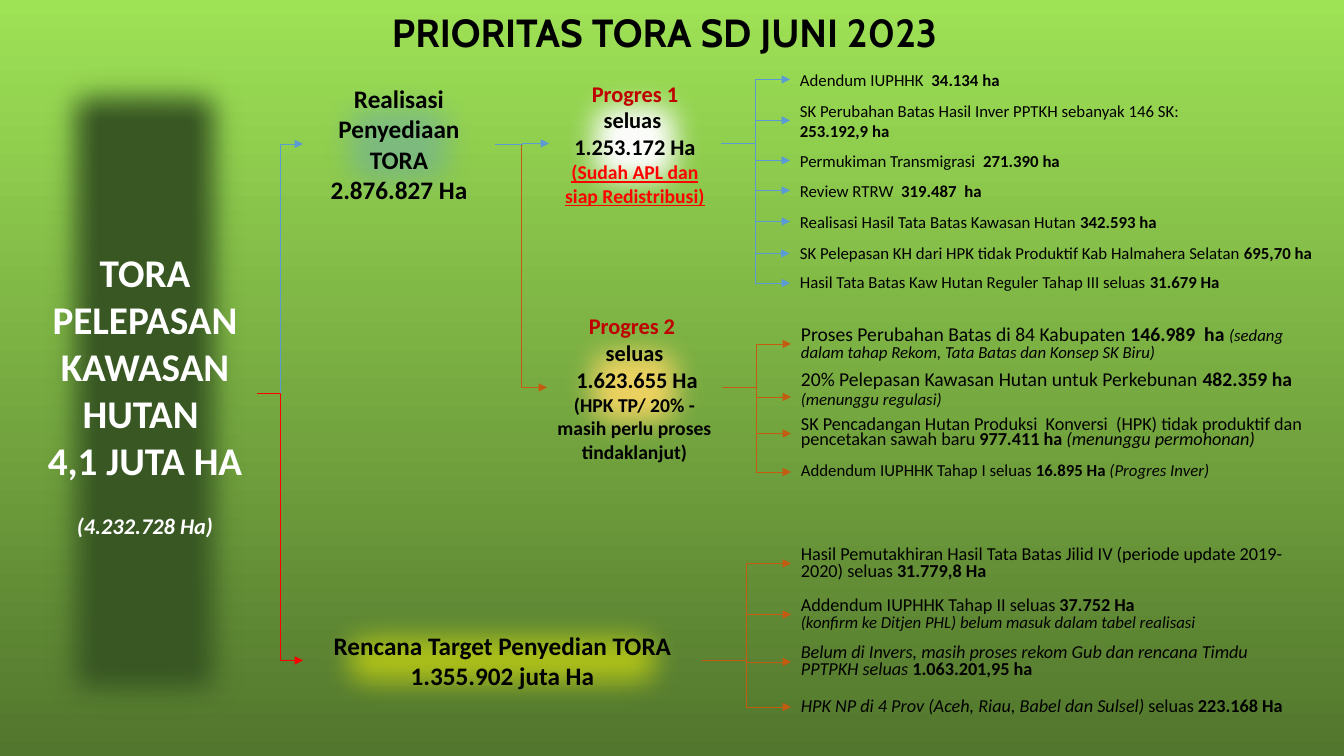
import lxml.etree
import pptx
import pptx.dml.color
import pptx.enum.shapes
import pptx.enum.text
import pptx.oxml.ns
import pptx.util

PX = 9071
SOFT_EDGE = 317500
RIGHT_SIDE, LEFT_SIDE = 3, 1
BLUE, ORANGE, RED = "5B9BD5", "C55A11", "FF0000"
BLACK, WHITE, DARK_RED = "000000", "FFFFFF", "C00000"
BOLD = {"bold": True}
ITALIC = {"italic": True}
qn = pptx.oxml.ns.qn


def rgb(value):
    return pptx.dml.color.RGBColor.from_string(value)


def add_text(paragraph, text, size=12, color=BLACK, name="Calibri", bold=False, italic=False, underline=False):
    run = paragraph.add_run()
    run.text = text
    run.font.name = name
    run.font.size = pptx.util.Pt(size)
    run.font.color.rgb = rgb(color)
    run.font.bold = bold
    run.font.italic = italic
    run.font.underline = underline


presentation = pptx.Presentation()
presentation.slide_width = 1344 * PX
presentation.slide_height = 756 * PX
slide = presentation.slides.add_slide(presentation.slide_layouts[6])

background = slide.background.fill
background.gradient()
background.gradient_angle = 270
for stop, color in zip(background.gradient_stops, ("9EE256", "52762D")):
    stop.color.rgb = rgb(color)

white_28 = {"size": 28, "color": WHITE, "bold": True}
black_18 = {"size": 18, "bold": True}
black_16 = {"size": 16, "bold": True}
red_16 = {"size": 16, "color": DARK_RED, "bold": True}

branches = [
    ("total", (33, 55, 224, 677), "385723", 100, [
        [("TORA PELEPASAN KAWASAN HUTAN ", white_28)],
        [("4,1 JUTA HA", white_28)],
        [("(4.232.728 Ha)", {"size": 16, "color": WHITE, "bold": True, "italic": True})]]),
    ("realisasi", (303, 61, 192, 166), BLUE, 36, [
        [("Realisasi Penyediaan TORA", black_18)],
        [("2.876.827 Ha", black_18)]]),
    ("rencana", (303, 593, 399, 135), "FFFF00", 50, [
        [("Rencana Target Penyedian TORA", black_18)],
        [("1.355.902 juta Ha", black_18)]]),
    ("progres 1", (549, 61, 172, 165), WHITE, 98, [
        [("Progres 1", red_16)],
        [("seluas ", black_16)],
        [("1.253.172 Ha", black_16)],
        [("(Sudah APL dan siap Redistribusi)",
          {"size": 14, "color": RED, "bold": True, "underline": True})]]),
    ("progres 2", (547, 307, 175, 161), "FFD966", 86, [
        [("Progres 2 ", red_16)],
        [("seluas", black_16)],
        [(" 1.623.655 Ha", black_16)],
        [("(HPK TP/ 20% - masih perlu proses tindaklanjut)", {"size": 14, "bold": True})]]),
]

size_13 = {"size": 13}
size_14 = {"size": 14}
bold_13 = {"size": 13, "bold": True}
bold_14 = {"size": 14, "bold": True}
italic_13 = {"size": 13, "italic": True}

detail_groups = [
    ("progres 1", "F2F2F2", BLUE, [
        ((790, 64, 470, 31), 1, [[("Adendum IUPHHK  ", {}), ("34.134 ha", BOLD)]]),
        ((790, 98, 469, 45), 1, [[
            ("SK Perubahan Batas Hasil Inver PPTKH sebanyak 146 SK: ", {}), ("253.192,9 ha", BOLD)]]),
        ((790, 147, 470, 27), 1, [[("Permukiman Transmigrasi  ", {}), ("271.390 ha", BOLD)]]),
        ((790, 177, 469, 27), 1, [[("Review RTRW ", {}), (" 319.487  ha", BOLD)]]),
        ((790, 207, 470, 29), 1, [[
            ("Realisasi Hasil Tata Batas Kawasan Hutan ", {}), ("342.593 ha", BOLD)]]),
        ((790, 239, 546, 27), 1, [[
            ("SK Pelepasan KH dari HPK tidak Produktif Kab Halmahera Selatan ", {}),
            ("695,70 ha", BOLD)]]),
        ((790, 270, 547, 26), 0.9, [[
            ("Hasil Tata Batas Kaw Hutan Reguler Tahap III seluas ", {}), ("31.679 Ha", BOLD)]])]),
    ("progres 2", "FFD966", ORANGE, [
        ((791, 323, 509, 42), 0.8, [[
            ("Proses Perubahan Batas di 84 Kabupaten", size_14), (" 146.989  ha ", bold_14),
            ("(sedang dalam tahap Rekom, Tata Batas dan Konsep SK Biru)", ITALIC)]]),
        ((791, 369, 528, 41), 0.9, [[
            ("20% Pelepasan Kawasan Hutan untuk Perkebunan ", size_14),
            ("482.359 ha ", bold_14), ("(menunggu regulasi)", ITALIC)]]),
        ((791, 413, 527, 41), 0.7, [[
            ("SK Pencadangan Hutan Produksi  Konversi  (HPK) tidak produktif dan pencetakan sawah baru",
             size_13),
            (" 977.411 ha ", bold_13), ("(menunggu permohonan)", italic_13)]]),
        ((791, 459, 526, 26), 0.8, [[
            ("Addendum IUPHHK Tahap I seluas ", {}), ("16.895 Ha ", BOLD),
            ("(Progres Inver)", ITALIC)]])]),
    ("rencana", "F4B183", ORANGE, [
        ((791, 539, 528, 49), 0.8, [[
            ("Hasil Pemutakhiran Hasil Tata Batas Jilid IV (periode update 2019-2020) seluas ", size_13),
            ("31.779,8 Ha", bold_13)]]),
        ((791, 594, 528, 41), 0.8, [
            [("Addendum IUPHHK Tahap II seluas ", size_13), ("37.752 Ha", bold_13)],
            [("(konfirm ke Ditjen PHL) belum masuk dalam tabel realisasi", ITALIC)]]),
        ((791, 641, 528, 42), 0.8, [[
            ("Belum di Invers, masih proses rekom Gub dan rencana Timdu PPTPKH seluas ", italic_13),
            ("1.063.201,95 ha", bold_13)]]),
        ((791, 686, 528, 42), 0.8, [[
            ("HPK NP di 4 Prov (Aceh, Riau, Babel dan Sulsel)", italic_13),
            (" seluas ", size_13), ("223.168 Ha", bold_13)]])]),
]

center = pptx.enum.text.PP_ALIGN.CENTER
left = pptx.enum.text.PP_ALIGN.LEFT
boxes = [(name, place, fill, opacity, center, 1, paragraphs)
         for name, place, fill, opacity, paragraphs in branches]
links = [
    ("total", "realisasi", BLUE),
    ("total", "rencana", RED),
    ("realisasi", "progres 2", ORANGE),
    ("realisasi", "progres 1", BLUE),
]
for source, fill, line_color, details in detail_groups:
    for number, (place, spacing, paragraphs) in enumerate(details, 1):
        name = f"{source} detail {number}"
        boxes.append((name, place, fill, 100, left, spacing, paragraphs))
        links.append((source, name, line_color))

shapes = {}
for name, place, fill, opacity, alignment, spacing, paragraphs in boxes:
    shape = slide.shapes.add_shape(
        pptx.enum.shapes.MSO_SHAPE.RECTANGLE, *(length * PX for length in place))
    shape.shadow.inherit = False
    shape.fill.solid()
    shape.fill.fore_color.rgb = rgb(fill)
    shape.line.fill.background()
    properties = shape.element.spPr
    fill_color = properties.find(qn("a:solidFill")).find(qn("a:srgbClr"))
    lxml.etree.SubElement(fill_color, qn("a:alpha"), val=str(opacity * 1000))
    lxml.etree.SubElement(properties.find(qn("a:effectLst")), qn("a:softEdge"), rad=str(SOFT_EDGE))
    frame = shape.text_frame
    frame.word_wrap = True
    frame.vertical_anchor = pptx.enum.text.MSO_ANCHOR.MIDDLE
    for index, runs in enumerate(paragraphs):
        paragraph = frame.add_paragraph() if index else frame.paragraphs[0]
        paragraph.alignment = alignment
        paragraph.line_spacing = spacing
        for text, text_format in runs:
            add_text(paragraph, text, **text_format)
    shapes[name] = shape
shapes["total"].text_frame.paragraphs[-1].space_before = pptx.util.Pt(20)

connectors = {}
for source, target, color in links:
    connector = slide.shapes.add_connector(pptx.enum.shapes.MSO_CONNECTOR.ELBOW, 0, 0, 0, 0)
    if target == "progres 1 detail 6":
        connector.begin_x, connector.begin_y = 737 * PX, 201 * PX
        connector.end_x, connector.end_y = 808 * PX, 235 * PX
        connector.element.spPr.find(qn("a:prstGeom")).set("prst", "bentConnector2")
        transform = connector.element.spPr.find(qn("a:xfrm"))
        transform.set("rot", "16200000")
        transform.set("flipH", "1")
    else:
        connector.begin_connect(shapes[source], RIGHT_SIDE)
        connector.end_connect(shapes[target], LEFT_SIDE)
    connector.line.color.rgb = rgb(color)
    connector.line.width = pptx.util.Pt(0.5)
    lxml.etree.SubElement(connector.line._get_or_add_ln(), qn("a:tailEnd"), type="triangle")
    lxml.etree.SubElement(connector.element.spPr, qn("a:effectLst"))
    connectors[target] = connector

plantation_link = connectors["progres 2 detail 2"]
properties = plantation_link.element.find(qn("p:nvCxnSpPr")).find(qn("p:cNvCxnSpPr"))
properties.remove(properties.find(qn("a:endCxn")))
plantation_link.end_y = 397 * PX

title = slide.shapes.add_textbox(19 * PX, 9 * PX, 1291 * PX, 60 * PX)
title.text_frame.word_wrap = True
paragraph = title.text_frame.paragraphs[0]
paragraph.alignment = center
paragraph.line_spacing = 0.9
add_text(paragraph, "PRIORITAS TORA SD JUNI 2023", size=28, name="Cabin", bold=True)

presentation.save("out.pptx")
